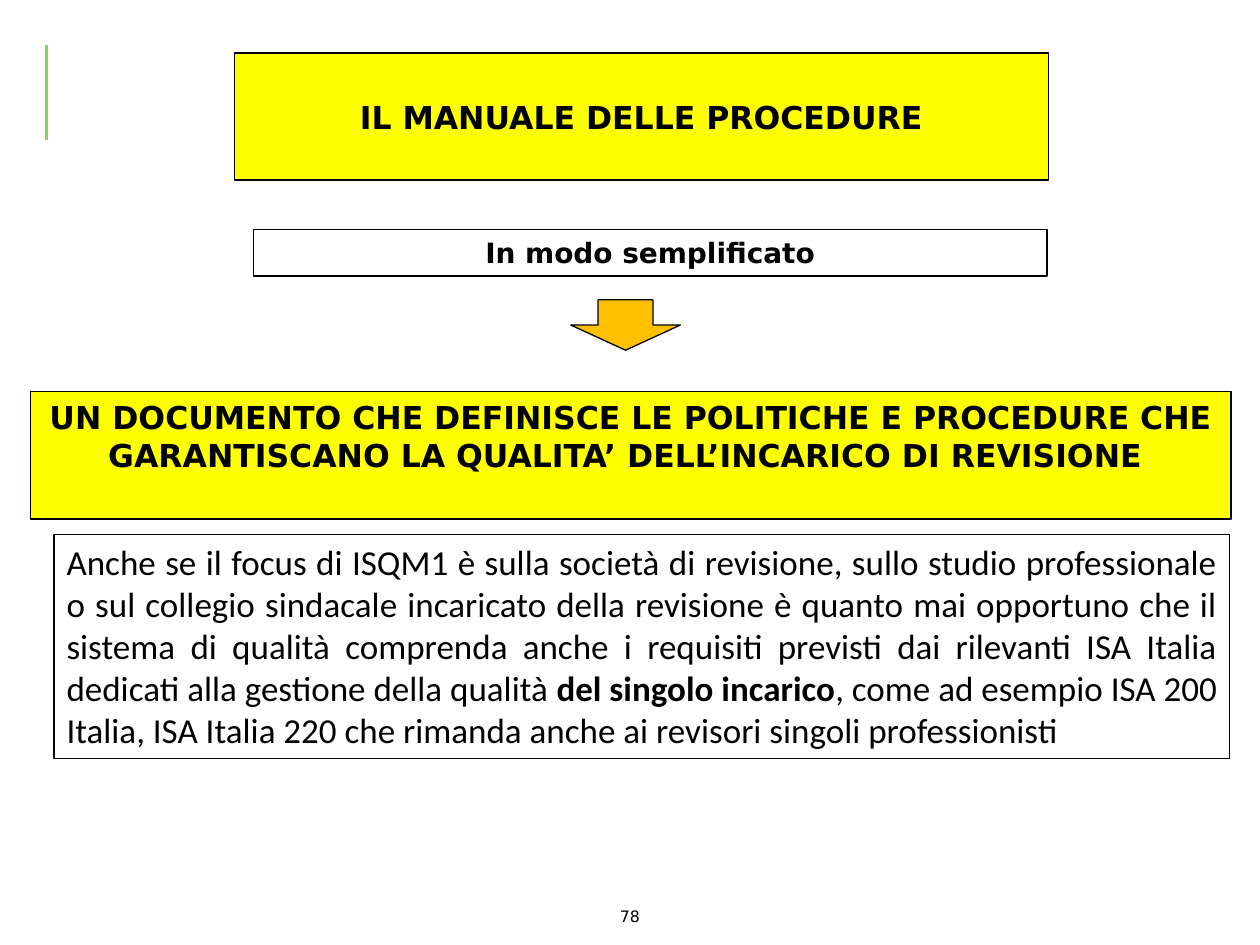
from lxml import etree
from pptx import Presentation
from pptx.dml.color import RGBColor
from pptx.enum.shapes import MSO_CONNECTOR, MSO_SHAPE
from pptx.enum.text import MSO_ANCHOR, PP_ALIGN
from pptx.oxml.ns import qn
from pptx.util import Inches, Pt

RECTANGLE, DOWN_ARROW = MSO_SHAPE.RECTANGLE, MSO_SHAPE.DOWN_ARROW
STRAIGHT = MSO_CONNECTOR.STRAIGHT
TOP, MIDDLE = MSO_ANCHOR.TOP, MSO_ANCHOR.MIDDLE
CENTER, JUSTIFY = PP_ALIGN.CENTER, PP_ALIGN.JUSTIFY

THEME = {
    "ink": RGBColor(0, 0, 0),
    "highlight": RGBColor(0xFF, 0xFF, 0x00),
    "arrow": RGBColor(0xFF, 0xC0, 0x00),
    "accent": RGBColor(0x8C, 0xD2, 0x50),
    "heading_font": "DejaVu Sans",
    "body_font": "Calibri",
    "heading_size": 18,
    "subheading_size": 16,
    "body_size": 20,
    "number_size": 9,
    "outline": 0.75,
    "accent_line": 1.5,
}

# Each text is a list of (words, bold) spans; each place is left, top, width, height.
PANELS = [
    {"place": (1.86, 0.42, 6.46, 1.01), "fill": "highlight", "anchor": MIDDLE,
     "align": CENTER, "style": "heading",
     "text": [("IL MANUALE DELLE PROCEDURE", True)]},
    {"place": (2.01, 1.82, 6.3, 0.37), "fill": None, "anchor": TOP,
     "align": CENTER, "style": "subheading",
     "text": [("In modo semplificato", True)]},
    {"place": (0.24, 3.11, 9.53, 1.01), "fill": "highlight", "anchor": TOP,
     "align": CENTER, "style": "heading",
     "text": [("UN DOCUMENTO CHE DEFINISCE LE POLITICHE E PROCEDURE CHE "
               "GARANTISCANO LA QUALITA’ DELL’INCARICO DI REVISIONE ", True)]},
    {"place": (0.43, 4.24, 9.33, 1.78), "fill": None, "anchor": TOP,
     "align": JUSTIFY, "style": "body",
     "text": [("Anche se il focus di ISQM1 è sulla società di revisione, sullo studio "
               "professionale o sul collegio sindacale incaricato della revisione è "
               "quanto mai opportuno che il sistema di qualità comprenda anche i "
               "requisiti previsti dai rilevanti ISA Italia dedicati alla gestione "
               "della qualità ", False),
              ("del singolo incarico", True),
              (", come ad esempio ISA 200 Italia, ISA Italia 220 che rimanda anche "
               "ai revisori singoli professionisti", False)]},
]
ARROW_PLACE = (4.53, 2.38, 0.87, 0.4)
PAGE_NUMBER = ("78", (4.72, 7.15, 0.56, 0.2))
ACCENT_ENDS = (0.37, 0.36, 0.37, 1.11)


def inches(values):
    return [Inches(value) for value in values]


def write(box, text, style, align, anchor):
    frame = box.text_frame
    frame.word_wrap = True
    frame.vertical_anchor = anchor
    para = frame.paragraphs[0]
    para.alignment = align
    for words, bold in text:
        span = para.add_run()
        span.text = words
        span.font.name = THEME["body_font" if style == "body" else "heading_font"]
        span.font.size = Pt(THEME[f"{style}_size"])
        span.font.bold = bold
        span.font.color.rgb = THEME["ink"]


def add_outlined(page, kind, place, fill):
    shape = page.shapes.add_shape(kind, *inches(place))
    shape.shadow.inherit = False
    if fill:
        shape.fill.solid()
        shape.fill.fore_color.rgb = THEME[fill]
    else:
        shape.fill.background()
    shape.line.color.rgb = THEME["ink"]
    shape.line.width = Pt(THEME["outline"])
    return shape


def add_accent(page):
    accent = page.shapes.add_connector(STRAIGHT, *inches(ACCENT_ENDS))
    accent.line.color.rgb = THEME["accent"]
    accent.line.width = Pt(THEME["accent_line"])
    etree.SubElement(accent._element.spPr, qn("a:effectLst"))


def main():
    deck = Presentation()
    deck.slide_width, deck.slide_height = inches((10, 7.5))
    page = deck.slides.add_slide(deck.slide_layouts[6])

    add_accent(page)
    for panel in PANELS:
        box = add_outlined(page, RECTANGLE, panel["place"], panel["fill"])
        write(box, panel["text"], panel["style"], panel["align"], panel["anchor"])
    add_outlined(page, DOWN_ARROW, ARROW_PLACE, "arrow")

    number, place = PAGE_NUMBER
    box = page.shapes.add_textbox(*inches(place))
    write(box, [(number, False)], "number", CENTER, TOP)

    deck.save("out.pptx")


if __name__ == "__main__":
    main()
